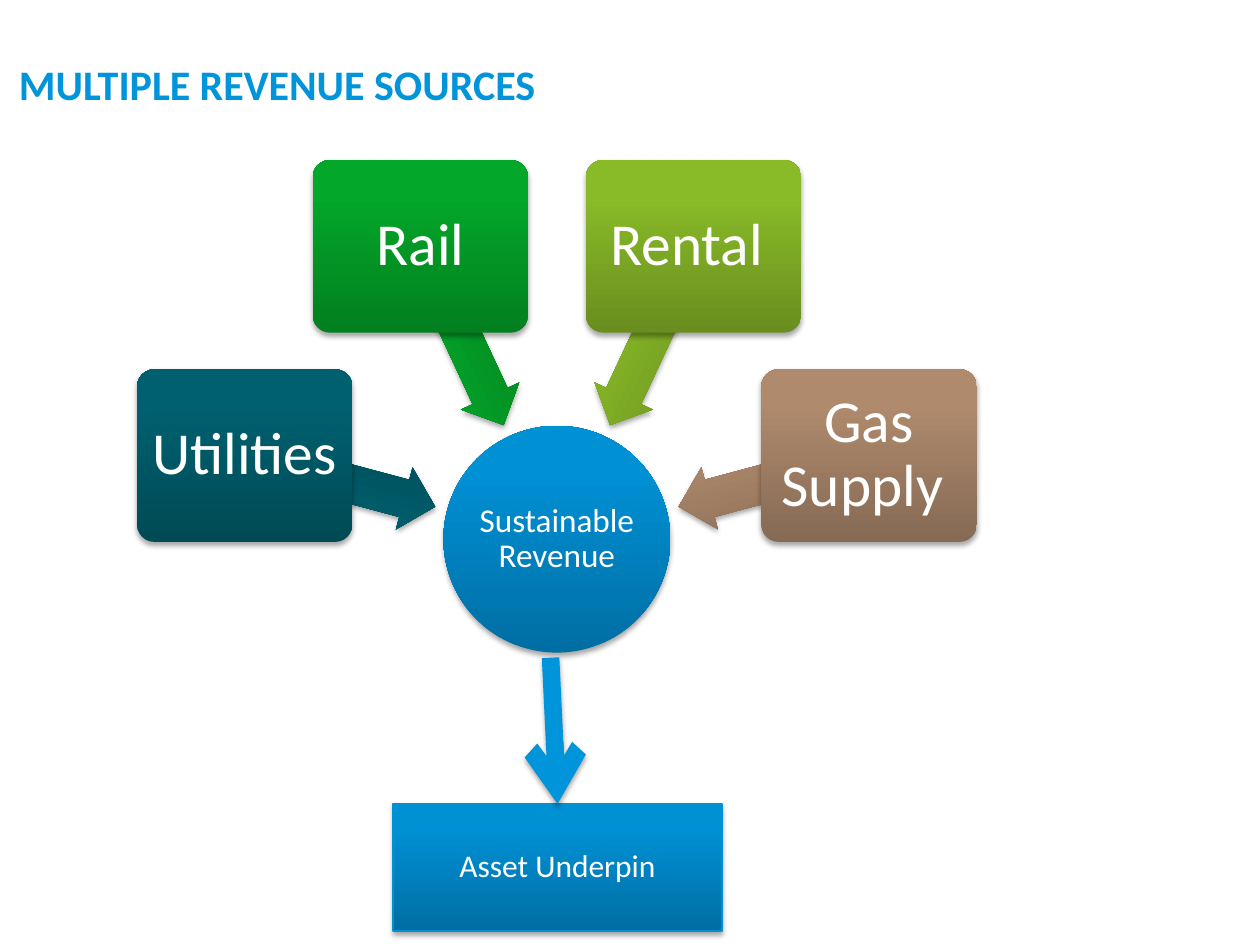
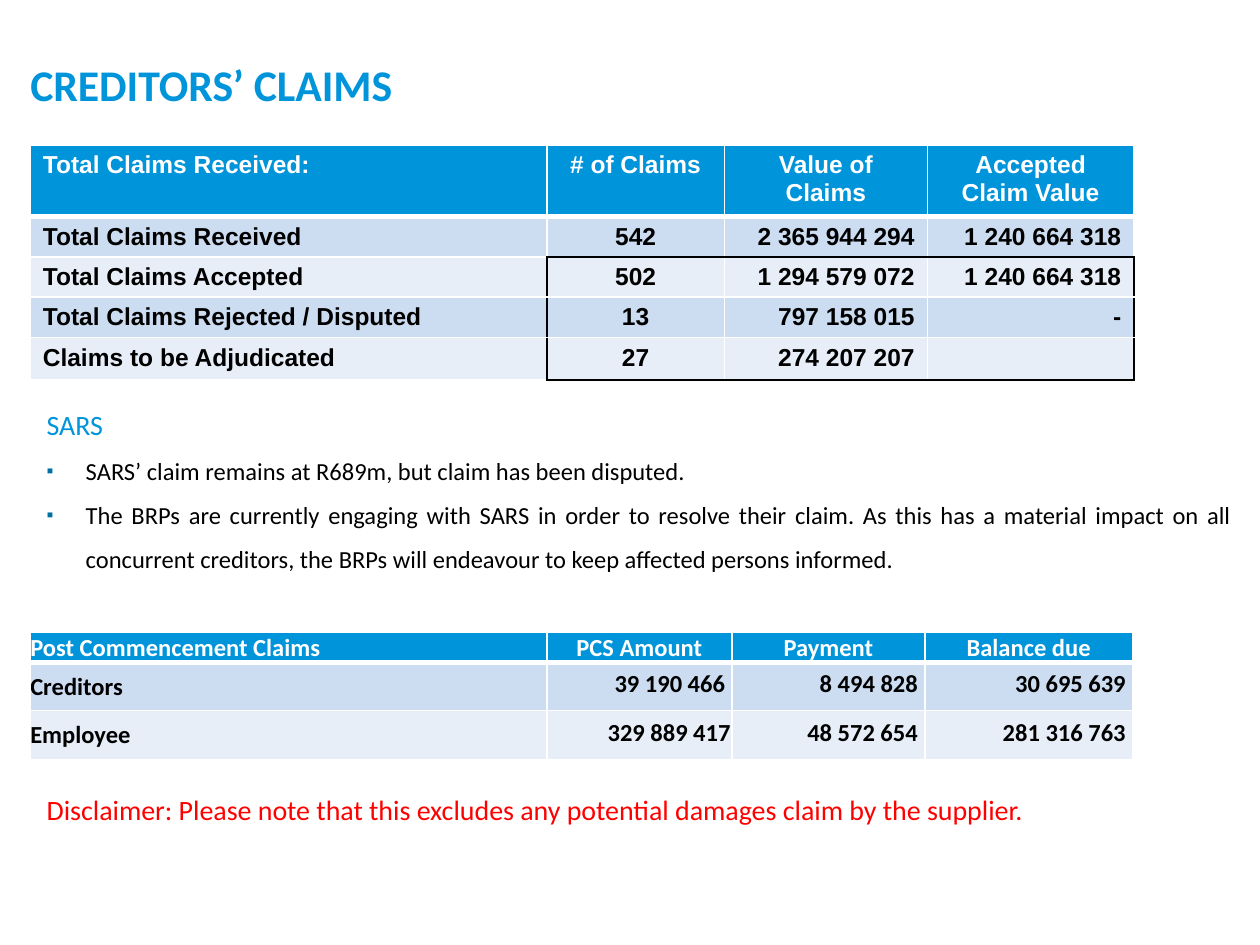
from dataclasses import dataclass
from math import cos, radians, sin

from lxml import etree
from pptx import Presentation
from pptx.dml.color import RGBColor
from pptx.enum.shapes import MSO_CONNECTOR, MSO_SHAPE
from pptx.enum.text import MSO_ANCHOR, MSO_AUTO_SIZE, PP_ALIGN
from pptx.oxml.ns import qn
from pptx.util import Inches, Pt

LEFT, CENTER, RIGHT, JUSTIFY = PP_ALIGN.LEFT, PP_ALIGN.CENTER, PP_ALIGN.RIGHT, PP_ALIGN.JUSTIFY
TOP, MIDDLE, BOTTOM = MSO_ANCHOR.TOP, MSO_ANCHOR.MIDDLE, MSO_ANCHOR.BOTTOM
OVAL, ROUNDED, RECTANGLE, ARROW = (MSO_SHAPE.OVAL, MSO_SHAPE.ROUNDED_RECTANGLE,
                                   MSO_SHAPE.RECTANGLE, MSO_SHAPE.LEFT_ARROW)


@dataclass(frozen=True)
class Theme:
    font: str = "Calibri"
    table_font: str = "Arial"
    blue: str = "0094DA"
    edge: str = "0091D5"
    bullet: str = "006FA3"
    white: str = "FFFFFF"
    black: str = "000000"
    red: str = "FF0000"
    bands: tuple = ("E7EEF8", "CCDCF1")
    # Gradients run from dark at the bottom to light at the top
    blues: tuple = ("006EA3", "0090D4")
    teals: tuple = ("004A55", "00606F")
    greens: tuple = ("027F1F", "03A729")
    limes: tuple = ("698E1F", "89BB28")
    browns: tuple = ("866A54", "AF8A6D")
    source_size: int = 34
    hub_size: int = 19
    asset_size: int = 18
    heading_size: int = 16
    text_size: int = 14


theme = Theme()


def write(para, text, size, color, bold=False, font=theme.font):
    span = para.add_run()
    span.text = text
    span.font.size = Pt(size)
    span.font.name = font
    span.font.bold = bold
    span.font.color.rgb = RGBColor.from_string(color)


def add_shadow(item):
    effects = etree.SubElement(item._element.spPr, qn("a:effectLst"))
    shadow = etree.SubElement(effects, qn("a:outerShdw"), blurRad=str(Pt(3.1)),
                              dist=str(Pt(1.8)), dir="5400000", rotWithShape="0")
    color = etree.SubElement(shadow, qn("a:srgbClr"), val=theme.black)
    etree.SubElement(color, qn("a:alpha"), val="35000")


deck = Presentation()
deck.slide_width, deck.slide_height = Inches(10), Inches(7.5)

# Slides and their titles
revenue_page = deck.slides.add_slide(deck.slide_layouts[5])
claims_page = deck.slides.add_slide(deck.slide_layouts[1])
for page, text, left, width, size in (
    (revenue_page, "MULTIPLE REVENUE SOURCES", 0.15, 7.68, 24),
    (claims_page, "CREDITORS’ CLAIMS", 0.24, 7.37, 25),
):
    title = page.shapes.title
    title.left, title.top = Inches(left), Inches(0.39)
    title.width, title.height = Inches(width), Inches(0.55)
    frame = title.text_frame
    frame.margin_left = frame.margin_top = frame.margin_right = frame.margin_bottom = 0
    frame.vertical_anchor = MIDDLE
    frame.auto_size = MSO_AUTO_SIZE.NONE
    frame.paragraphs[0].alignment = LEFT
    write(frame.paragraphs[0], text, size, theme.blue, bold=True)

# Revenue hub, with the sources fanned out above it at equal angles
hub_x, hub_y, hub_size = 4.42, 4.28, 1.8
hub = revenue_page.shapes.add_shape(OVAL, Inches(hub_x - hub_size / 2), Inches(hub_y - hub_size / 2),
                                    Inches(hub_size), Inches(hub_size))
blocks = [(hub, theme.blues, "Sustainable Revenue", theme.hub_size, 0.01)]

sources = (("Utilities", theme.teals), ("Rail", theme.greens),
           ("Rental ", theme.limes), ("Gas Supply ", theme.browns))
for index, (name, colors) in enumerate(sources):
    angle = 195 + 50 * index
    for kind, radius, width, height in ((ARROW, 1.785, 1.57, 0.51), (ROUNDED, 2.565, 1.71, 1.37)):
        center_x = hub_x + radius * cos(radians(angle))
        center_y = hub_y + radius * sin(radians(angle))
        shape = revenue_page.shapes.add_shape(kind, Inches(center_x - width / 2), Inches(center_y - height / 2),
                                              Inches(width), Inches(height))
        if kind == ARROW:
            shape.rotation = angle
            shape.adjustments[0], shape.adjustments[1] = 0.6, 0.5
            blocks.append((shape, colors, "", theme.source_size, 0))
        else:
            shape.adjustments[0] = 0.1
            blocks.append((shape, colors, name, theme.source_size, 0.07))

asset = revenue_page.shapes.add_shape(RECTANGLE, Inches(3.12), Inches(6.38), Inches(2.61), Inches(1.01))
blocks.append((asset, theme.blues, "Asset Underpin", theme.asset_size, 0.1))

# Gradient, shadow and label of every block
for shape, (dark, light), text, size, margin in blocks:
    shape.fill.gradient()
    shape.fill.gradient_angle = 90
    for stop, color, position in zip(shape.fill.gradient_stops, (dark, light), (0, 0.8)):
        stop.color.rgb = RGBColor.from_string(color)
        stop.position = position
    shape.line.fill.background()
    add_shadow(shape)
    if text:
        frame = shape.text_frame
        frame.word_wrap = True
        frame.vertical_anchor = MIDDLE
        frame.margin_left = frame.margin_right = Inches(margin)
        frame.margin_top = frame.margin_bottom = Inches(margin)
        para = frame.paragraphs[0]
        para.alignment = CENTER
        para.line_spacing = 0.9
        write(para, text, size, theme.white)
asset.line.color.rgb = RGBColor.from_string(theme.edge)
asset.line.width = Pt(0.75)

# Arrow from the hub down to the asset
link = revenue_page.shapes.add_connector(MSO_CONNECTOR.STRAIGHT, Inches(4.37), Inches(5.22),
                                         Inches(4.42), Inches(6.38))
link.end_connect(asset, 0)
link.line.color.rgb = RGBColor.from_string(theme.blue)
link.line.width = Pt(10)
etree.SubElement(link.line._get_or_add_ln(), qn("a:tailEnd"), type="arrow")
add_shadow(link)

# Notes on the claims
body = claims_page.placeholders[1]
body.left, body.top, body.width, body.height = Inches(0.24), Inches(3.1), Inches(9.54), Inches(3.76)
frame = body.text_frame
frame.margin_left = frame.margin_top = frame.margin_right = frame.margin_bottom = 0
frame.auto_size = MSO_AUTO_SIZE.NONE
notes = (
    ("SARS", theme.heading_size, theme.blue, False, 0),
    ("SARS’ claim remains at R689m, but claim has been disputed.",
     theme.text_size, theme.black, True, 0),
    ("The BRPs are currently engaging with SARS in order to resolve their claim. As this has a "
     "material impact on all concurrent creditors, the BRPs will endeavour to keep affected "
     "persons informed.", theme.text_size, theme.black, True, 0),
    ("Disclaimer: Please note that this excludes any potential damages claim by the supplier.",
     theme.heading_size, theme.red, False, 116),
)
for index, (text, size, color, bulleted, gap) in enumerate(notes):
    para = frame.paragraphs[0] if index == 0 else frame.add_paragraph()
    properties = para._p.get_or_add_pPr()
    properties.set("marL", str(Inches(0.44 if bulleted else 0.13)))
    properties.set("indent", str(Inches(-0.31 if bulleted else 0)))
    if bulleted:
        bullet_color = etree.SubElement(properties, qn("a:buClr"))
        etree.SubElement(bullet_color, qn("a:srgbClr"), val=theme.bullet)
        etree.SubElement(properties, qn("a:buSzPct"), val="80000")
        etree.SubElement(properties, qn("a:buChar"), char="▪")
    else:
        etree.SubElement(properties, qn("a:buNone"))
    para.alignment = JUSTIFY
    para.line_spacing = 1.5
    para.space_before, para.space_after = Pt(gap), Pt(0)
    write(para, text, size, color)

# Claims tables: cell margins are left, top, right, bottom
claims = dict(
    top=1.15, widths=(4.1, 1.41, 1.61, 1.64), heights=(0.57, 0.32, 0.32, 0.32, 0.33),
    font=theme.table_font, aligns=(LEFT, CENTER, RIGHT, RIGHT), anchors=(TOP, TOP),
    label_margins=(0.1, 0.05, 0.1, 0.05), value_margins=(0.1, 0.05, 0.1, 0.05), outlined=True,
    rows=(("Total Claims Received:", "# of Claims", "Value of Claims", "Accepted Claim Value"),
          ("Total Claims Received", "542", "2 365 944 294", "1 240 664 318"),
          ("Total Claims Accepted", "502", "1 294 579 072", "1 240 664 318"),
          ("Total Claims Rejected / Disputed", "13", "797 158 015", "-"),
          ("Claims to be Adjudicated", "27", "274 207 207", "")),
)
post_claims = dict(
    top=5.02, widths=(4.1, 1.47, 1.53, 1.65), heights=(0.24, 0.38, 0.39),
    font=theme.font, aligns=(LEFT, RIGHT, RIGHT, RIGHT), anchors=(BOTTOM, MIDDLE),
    label_margins=(0, 0, 0, 0), value_margins=(0.01, 0.01, 0.01, 0.05), outlined=False,
    rows=(("Post Commencement Claims", "PCS Amount", "Payment", "Balance due"),
          ("Creditors", "39 190 466 ", "8 494 828 ", "30 695 639 "),
          ("Employee", "329 889 417", "48 572 654 ", "281 316 763 ")),
)
for data in (claims, post_claims):
    rows, widths, heights = data["rows"], data["widths"], data["heights"]
    table = claims_page.shapes.add_table(len(rows), len(widths), Inches(0.24), Inches(data["top"]),
                                         Inches(sum(widths)), Inches(sum(heights))).table
    for column, width in zip(table.columns, widths):
        column.width = Inches(width)
    for table_row, height in zip(table.rows, heights):
        table_row.height = Inches(height)
    # A black outline surrounds the values from the third row down
    outline = {(row, column) for row in range(2, len(rows)) for column in range(1, len(widths))
               if data["outlined"]}
    for row, texts in enumerate(rows):
        for column, text in enumerate(texts):
            cell = table.cell(row, column)
            header = row == 0
            margins = data["label_margins"] if header or column == 0 else data["value_margins"]
            (cell.margin_left, cell.margin_top,
             cell.margin_right, cell.margin_bottom) = [Inches(margin) for margin in margins]
            cell.vertical_anchor = data["anchors"][0 if header else 1]
            para = cell.text_frame.paragraphs[0]
            para.alignment = CENTER if header and column else data["aligns"][column]
            if text:
                write(para, text, theme.text_size, theme.white if header else theme.black,
                      bold=True, font=data["font"])
            else:
                etree.SubElement(para._p, qn("a:endParaRPr"), sz=str(theme.text_size * 100))
            # Borders, black where a cell and its neighbour lie on either side of the outline
            for side, down, across in (("L", 0, -1), ("R", 0, 1), ("T", -1, 0), ("B", 1, 0)):
                on_outline = ((row, column) in outline) != ((row + down, column + across) in outline)
                heavy = (header and side == "B") or (row == 1 and side == "T")
                border = etree.SubElement(cell._tc.get_or_add_tcPr(), qn(f"a:ln{side}"),
                                          w=str(Pt(3 if heavy else 1)))
                paint = etree.SubElement(border, qn("a:solidFill"))
                etree.SubElement(paint, qn("a:srgbClr"), val=theme.black if on_outline else theme.white)
            cell.fill.solid()
            cell.fill.fore_color.rgb = RGBColor.from_string(theme.blue if header else theme.bands[row % 2])

deck.save("out.pptx")
